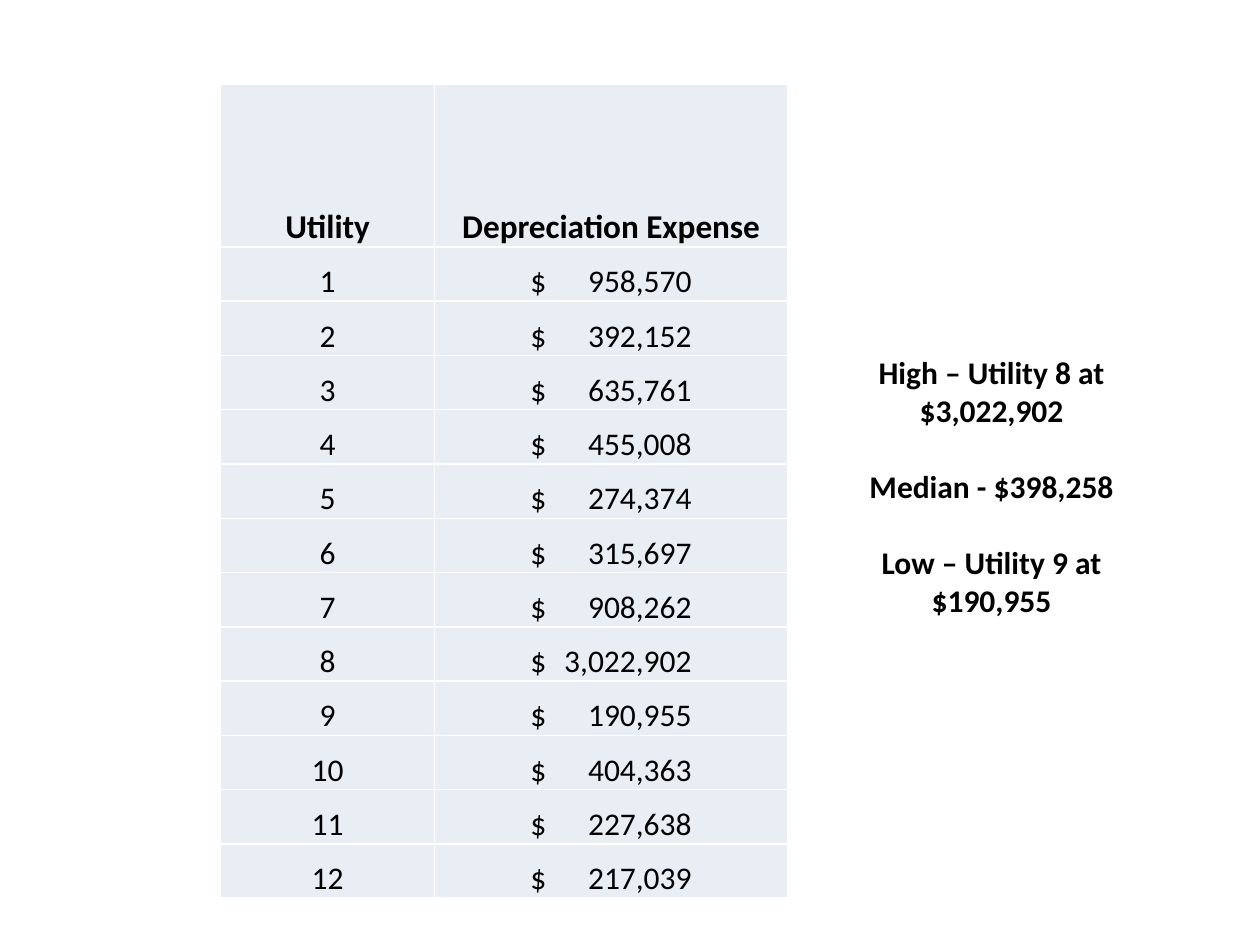
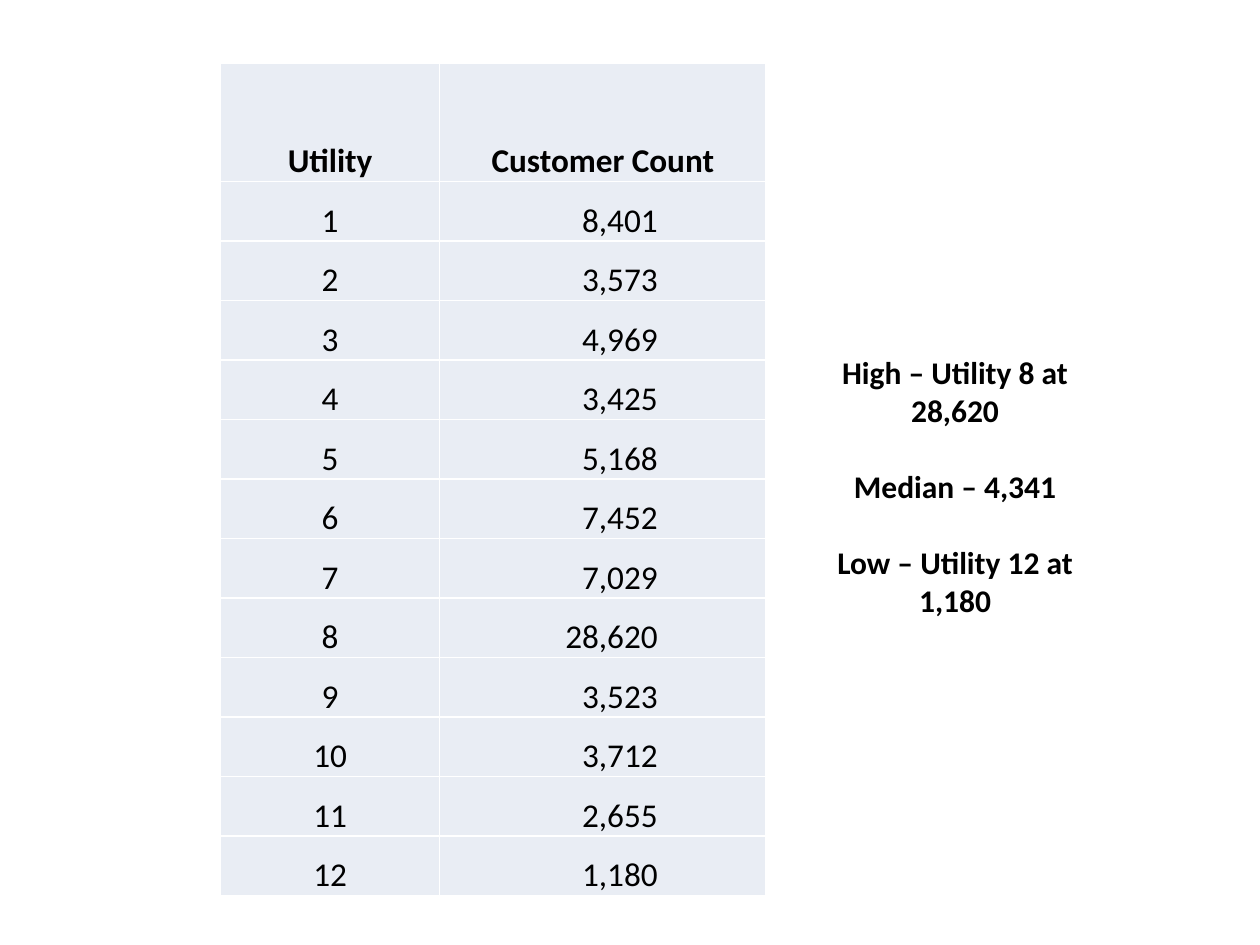
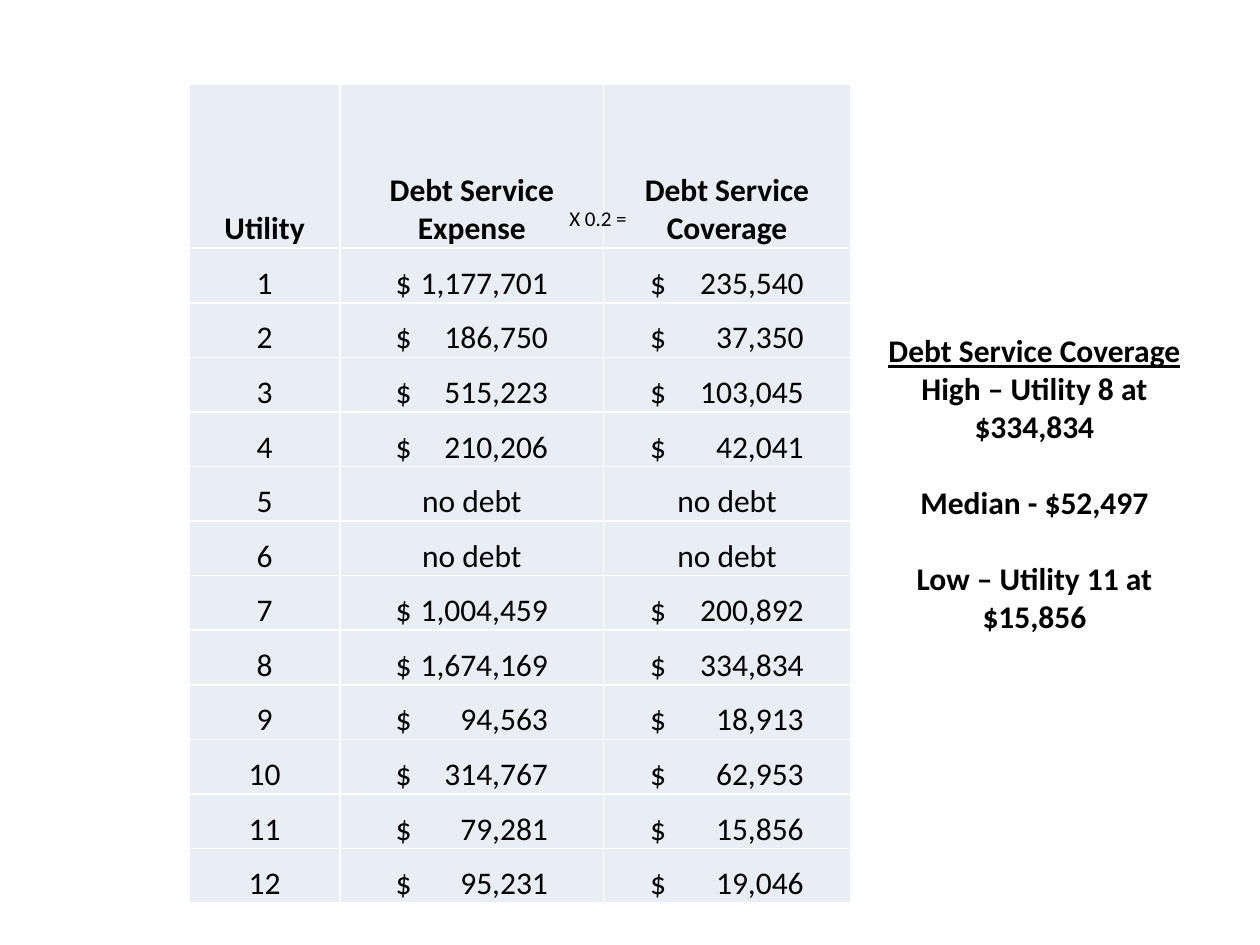
import dataclasses

import lxml.etree
import pptx
import pptx.dml.color
import pptx.enum.text
import pptx.oxml.ns
import pptx.util

Inches = pptx.util.Inches
Pt = pptx.util.Pt
ALIGN = pptx.enum.text.PP_ALIGN
BLANK_LAYOUT = 6


@dataclasses.dataclass(frozen=True)
class Theme:
    font: str = "Calibri"
    ink: str = "000000"
    cell_fill: str = "E9EDF4"
    grid: str = "FFFFFF"
    grid_pt: float = 1
    body_pt: float = 18
    heading_pt: float = 19
    factor_pt: float = 12
    finding_gap_pt: float = 22
    cell_inset: float = 0.01


@dataclasses.dataclass(frozen=True)
class Column:
    heading: str
    width: float
    values: tuple
    dollar_at: float = 0
    amount_span: float = 0
    right_inset: float = 0


THEME = Theme()
UTILITIES = tuple(str(number) for number in range(1, 13))

DEPRECIATION = ("958,570", "392,152", "635,761", "455,008", "274,374", "315,697",
                "908,262", "3,022,902", "190,955", "404,363", "227,638", "217,039")
CUSTOMERS = ("8,401", "3,573", "4,969", "3,425", "5,168", "7,452",
             "7,029", "28,620", "3,523", "3,712", "2,655", "1,180")
DEBT_EXPENSE = ("1,177,701", "186,750", "515,223", "210,206", "no debt", "no debt",
                "1,004,459", "1,674,169", "94,563", "314,767", "79,281", "95,231")
DEBT_COVERAGE = ("235,540", "37,350", "103,045", "42,041", "no debt", "no debt",
                 "200,892", "334,834", "18,913", "62,953", "15,856", "19,046")


def rgb(value):
    return pptx.dml.color.RGBColor.from_string(value)


def set_all(target, formats):
    for attribute, value in formats.items():
        setattr(target, attribute, value)


def style_text(paragraph, size, **formats):
    set_all(paragraph.font, {"name": THEME.font, "size": Pt(size), **formats})
    paragraph.font.color.rgb = rgb(THEME.ink)


def add_right_tab(paragraph, position):
    properties = paragraph._p.get_or_add_pPr()
    tabs = lxml.etree.SubElement(properties, pptx.oxml.ns.qn("a:tabLst"))
    lxml.etree.SubElement(tabs, pptx.oxml.ns.qn("a:tab"),
                          pos=str(Inches(position)), algn="r")


def draw_cell_grid(cell):
    properties = cell._tc.get_or_add_tcPr()
    for side in ("lnL", "lnR", "lnT", "lnB"):
        line = lxml.etree.SubElement(properties, pptx.oxml.ns.qn(f"a:{side}"),
                                     w=str(Pt(THEME.grid_pt)))
        fill = lxml.etree.SubElement(line, pptx.oxml.ns.qn("a:solidFill"))
        lxml.etree.SubElement(fill, pptx.oxml.ns.qn("a:srgbClr"), val=THEME.grid)


def fill_cell(cell, text, size, bold=False, column=None):
    draw_cell_grid(cell)
    cell.fill.solid()
    cell.fill.fore_color.rgb = rgb(THEME.cell_fill)
    inset = Inches(THEME.cell_inset)
    set_all(cell, {"margin_left": inset, "margin_right": inset, "margin_top": inset,
                   "margin_bottom": 0,
                   "vertical_anchor": pptx.enum.text.MSO_ANCHOR.BOTTOM})
    paragraph = cell.text_frame.paragraphs[0]
    paragraph.alignment = ALIGN.CENTER
    if column and column.amount_span and text[0].isdigit():
        paragraph.alignment = ALIGN.LEFT
        cell.margin_left = Inches(column.dollar_at)
        add_right_tab(paragraph, column.amount_span)
        text = f"$\t{text}"
    elif column and column.right_inset:
        paragraph.alignment = ALIGN.RIGHT
        cell.margin_right = Inches(column.right_inset)
    paragraph.add_run().text = text
    style_text(paragraph, size, bold=bold)


def add_utility_table(slide, left, top, height, heading_height, columns,
                      heading_pt=THEME.heading_pt, body_pt=THEME.body_pt):
    row_count = len(UTILITIES) + 1
    width = sum(column.width for column in columns)
    table = slide.shapes.add_table(row_count, len(columns), Inches(left), Inches(top),
                                   Inches(width), Inches(height)).table
    set_all(table, {"first_row": False, "horz_banding": False})
    body_height = (height - heading_height) / len(UTILITIES)
    for index, row in enumerate(table.rows):
        row.height = Inches(body_height if index else heading_height)
    for index, column in enumerate(columns):
        table.columns[index].width = Inches(column.width)
        fill_cell(table.cell(0, index), column.heading, heading_pt, bold=True)
        for row, value in enumerate(column.values, start=1):
            fill_cell(table.cell(row, index), value, body_pt, column=column)


def add_text_frame(slide, left, top, width, height):
    frame = slide.shapes.add_textbox(Inches(left), Inches(top),
                                     Inches(width), Inches(height)).text_frame
    frame.word_wrap = True
    return frame


def add_findings(slide, left, top, height, findings, heading=None):
    frame = add_text_frame(slide, left, top, 2.58, height)
    lines = [heading, *findings] if heading else findings
    for index, line in enumerate(lines):
        paragraph = frame.add_paragraph() if index else frame.paragraphs[0]
        paragraph.alignment = ALIGN.CENTER
        if index and lines[index - 1] != heading:
            paragraph.space_before = Pt(THEME.finding_gap_pt)
        paragraph.add_run().text = line
        style_text(paragraph, THEME.body_pt, bold=True)
        paragraph.runs[0].font.underline = line == heading


def add_coverage_factor(slide):
    paragraph = add_text_frame(slide, 4.42, 1.58, 0.75, 0.3).paragraphs[0]
    paragraph.add_run().text = "X 0.2 ="
    style_text(paragraph, THEME.factor_pt)


def add_depreciation_slide(slide):
    add_findings(slide, 6.58, 2.75, 2.22, [
        "High – Utility 8 at $3,022,902", "Median - $398,258",
        "Low – Utility 9 at $190,955"])
    add_utility_table(slide, 1.75, 0.67, 6.46, 1.29, [
        Column("Utility", 1.7, UTILITIES),
        Column("Depreciation Expense", 2.8, DEPRECIATION, 0.76, 1.28)])


def add_customer_slide(slide):
    add_findings(slide, 6.29, 2.75, 2.22, [
        "High – Utility 8 at 28,620", "Median – 4,341", "Low – Utility 12 at 1,180"])
    add_utility_table(slide, 1.75, 0.5, 6.61, 0.94, [
        Column("Utility", 1.74, UTILITIES),
        Column("Customer Count", 2.59, CUSTOMERS, right_inset=0.86)],
        body_pt=THEME.heading_pt)


def add_debt_service_slide(slide):
    add_findings(slide, 6.92, 2.58, 2.52, [
        "High – Utility 8 at $334,834", "Median - $52,497",
        "Low – Utility 11 at $15,856"], heading="Debt Service Coverage")
    add_utility_table(slide, 1.5, 0.67, 6.5, 1.3, [
        Column("Utility", 1.2, UTILITIES),
        Column("Debt Service Expense", 2.09, DEBT_EXPENSE, 0.44, 1.21),
        Column("Debt Service Coverage", 1.96, DEBT_COVERAGE, 0.37, 1.22)],
        heading_pt=THEME.body_pt)
    add_coverage_factor(slide)


def main():
    deck = pptx.Presentation()
    set_all(deck, {"slide_width": Inches(10), "slide_height": Inches(7.5)})
    for build in (add_depreciation_slide, add_customer_slide, add_debt_service_slide):
        build(deck.slides.add_slide(deck.slide_layouts[BLANK_LAYOUT]))
    deck.save("out.pptx")


if __name__ == "__main__":
    main()
